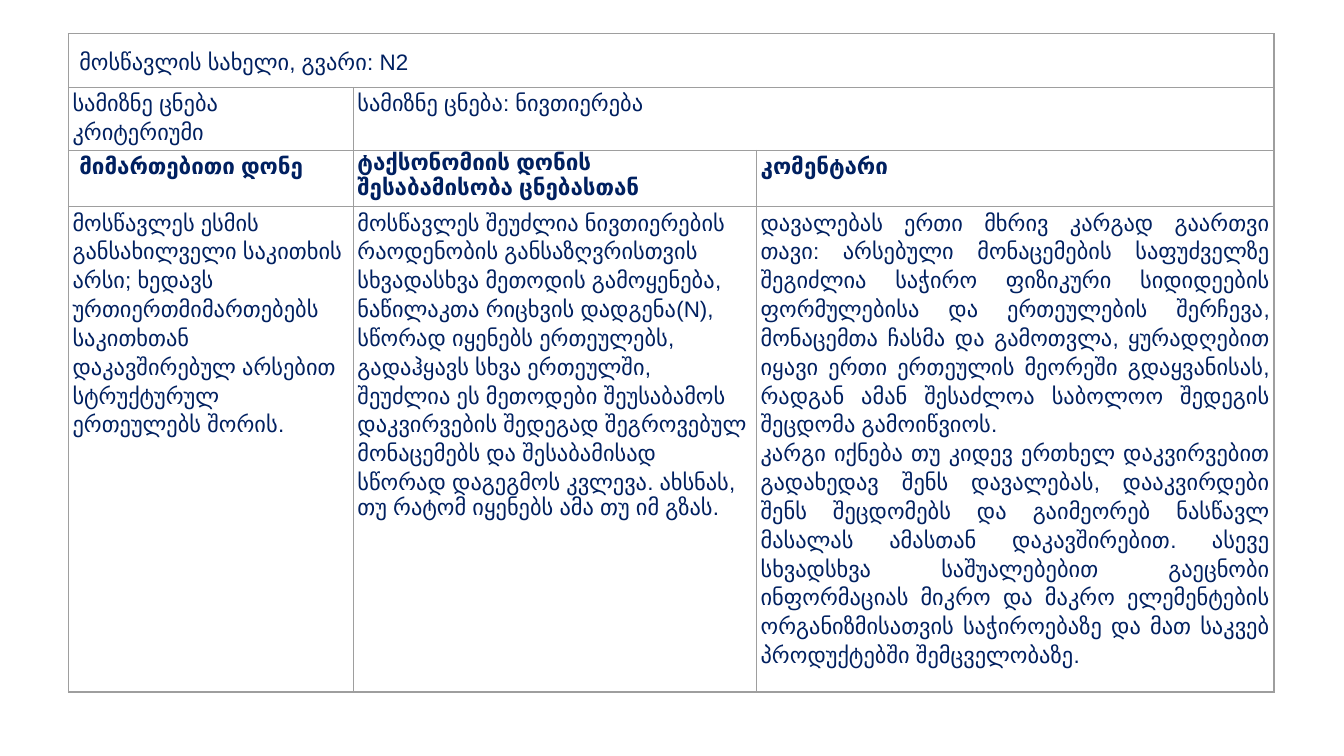
from dataclasses import dataclass

import pptx
import pptx.dml.color
import pptx.enum.text
import pptx.oxml
import pptx.oxml.ns
import pptx.util
from pptx.util import Inches


@dataclass(frozen=True)
class Theme:
    font: str = "Arial"
    size: int = 12
    ink: str = "002060"
    border: str = "9E9E9E"
    border_width: float = 0.75
    spacing: float = 1.15


theme = Theme()
ALIGN = pptx.enum.text.PP_ALIGN
ANCHOR = pptx.enum.text.MSO_ANCHOR


def draw_borders(cell):
    properties = cell._tc.get_or_add_tcPr()
    for side in ("lnL", "lnR", "lnT", "lnB"):
        properties.append(pptx.oxml.parse_xml(
            f'<a:{side} {pptx.oxml.ns.nsdecls("a")} w="{pptx.util.Pt(theme.border_width)}">'
            f'<a:solidFill><a:srgbClr val="{theme.border}"/></a:solidFill></a:{side}>'))


def write_cell(cell, paragraphs, bold=False, align=ALIGN.LEFT, indent=0, tight_from=None):
    """Fill a cell; paragraphs from index tight_from on are single spaced."""
    cell.margin_left = Inches(0.03 + indent)
    frame = cell.text_frame
    for index, text in enumerate(paragraphs):
        para = frame.paragraphs[0] if index == 0 else frame.add_paragraph()
        para.alignment = align
        tight = tight_from is not None and index >= tight_from
        para.line_spacing = 1.0 if tight else theme.spacing
        span = para.add_run()
        span.text = text
        span.font.name = theme.font
        span.font.size = pptx.util.Pt(theme.size)
        span.font.bold = bold
        span.font.color.rgb = pptx.dml.color.RGBColor.from_string(theme.ink)


deck = pptx.Presentation()
deck.slide_width = Inches(10)
deck.slide_height = Inches(10 * 9 / 16)
page = deck.slides.add_slide(deck.slide_layouts[6])

column_widths = [2.12, 3, 3.85]
row_heights = [0.4, 0.47, 0.42, 3.61]
table = page.shapes.add_table(
    len(row_heights), len(column_widths), Inches(0.51), Inches(0.25),
    Inches(sum(column_widths)), Inches(sum(row_heights))).table
table.first_row = False
table.horz_banding = False
for column, width in zip(table.columns, column_widths):
    column.width = Inches(width)
for row, height in zip(table.rows, row_heights):
    row.height = Inches(height)

for cell in table.iter_cells():
    draw_borders(cell)
    cell.fill.background()
    cell.margin_left = cell.margin_right = Inches(0.03)
    cell.margin_top = cell.margin_bottom = 0
table.cell(0, 0).merge(table.cell(0, 2))
table.cell(1, 1).merge(table.cell(1, 2))

# Student and target concept
name_indent = 0.05
student = table.cell(0, 0)
student.vertical_anchor = ANCHOR.MIDDLE
write_cell(student, ["მოსწავლის სახელი, გვარი: N2"], indent=name_indent)
write_cell(table.cell(1, 0), ["სამიზნე ცნება", "კრიტერიუმი"])
write_cell(table.cell(1, 1), ["სამიზნე ცნება: ნივთიერება"])

# Column headings
write_cell(table.cell(2, 0), ["მიმართებითი დონე"], bold=True, indent=name_indent)
write_cell(table.cell(2, 1), ["ტაქსონომიის დონის შესაბამისობა ცნებასთან"],
           bold=True, tight_from=0)
write_cell(table.cell(2, 2), ["კომენტარი"], bold=True)

# Assessment
write_cell(table.cell(3, 0), [
    "მოსწავლეს ესმის განსახილველი საკითხის არსი; ხედავს ურთიერთმიმართებებს "
    "საკითხთან დაკავშირებულ არსებით სტრუქტურულ ერთეულებს შორის."])
write_cell(table.cell(3, 1), [
    "მოსწავლეს შეუძლია ნივთიერების",
    "რაოდენობის განსაზღვრისთვის",
    "სხვადასხვა მეთოდის გამოყენება, ნაწილაკთა რიცხვის დადგენა(N), "
    "სწორად იყენებს ერთეულებს, გადაჰყავს სხვა ერთეულში,",
    "შეუძლია ეს მეთოდები შეუსაბამოს",
    "დაკვირვების შედეგად შეგროვებულ მონაცემებს და შესაბამისად",
    "სწორად დაგეგმოს კვლევა. ახსნას,",
    "თუ რატომ იყენებს ამა თუ იმ გზას."], tight_from=6)
write_cell(table.cell(3, 2), [
    "დავალებას ერთი მხრივ კარგად გაართვი თავი: არსებული მონაცემების საფუძველზე "
    "შეგიძლია საჭირო ფიზიკური სიდიდეების ფორმულებისა და ერთეულების შერჩევა, "
    "მონაცემთა ჩასმა და გამოთვლა, ყურადღებით იყავი ერთი ერთეულის მეორეში "
    "გდაყვანისას, რადგან ამან შესაძლოა საბოლოო შედეგის შეცდომა გამოიწვიოს.",
    "კარგი იქნება თუ კიდევ ერთხელ დაკვირვებით გადახედავ შენს დავალებას, "
    "დააკვირდები შენს შეცდომებს და გაიმეორებ ნასწავლ მასალას ამასთან "
    "დაკავშირებით. ასევე სხვადსხვა საშუალებებით გაეცნობი ინფორმაციას მიკრო და "
    "მაკრო ელემენტების ორგანიზმისათვის საჭიროებაზე და მათ საკვებ პროდუქტებში "
    "შემცველობაზე."], align=ALIGN.JUSTIFY)

deck.save("out.pptx")
